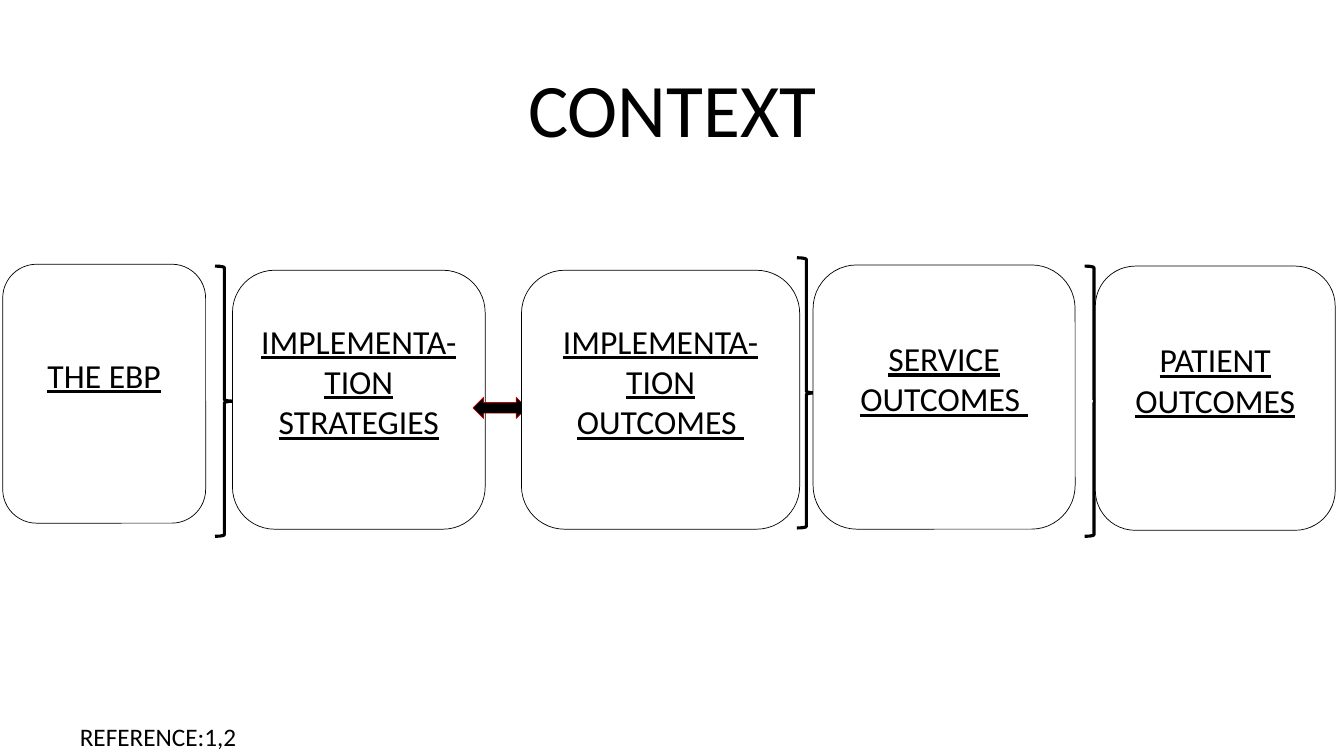
from pptx import Presentation
from pptx.dml.color import RGBColor
from pptx.enum.shapes import MSO_SHAPE
from pptx.enum.text import MSO_ANCHOR, MSO_AUTO_SIZE, PP_ALIGN
from pptx.util import Inches, Pt

ROUNDED = MSO_SHAPE.ROUNDED_RECTANGLE
BRACE = MSO_SHAPE.RIGHT_BRACE
DOUBLE_ARROW = MSO_SHAPE.LEFT_RIGHT_ARROW
MIDDLE, TOP = MSO_ANCHOR.MIDDLE, MSO_ANCHOR.TOP
CENTER, LEFT = PP_ALIGN.CENTER, PP_ALIGN.LEFT
FIT_SHAPE = MSO_AUTO_SIZE.SHAPE_TO_FIT_TEXT

COLORS = {"ink": "000000", "paper": "FFFFFF", "accent": "C00000"}
FONT = "Calibri"


class ContextPage:
    """Places elements by percent of the slide's width and height."""

    def __init__(self, deck):
        self.deck = deck
        self.page = deck.slides.add_slide(deck.slide_layouts[6])

    def area(self, left, top, width, height):
        across, down = self.deck.slide_width, self.deck.slide_height
        return [int(share * full / 100) for share, full in
                ((left, across), (top, down), (width, across), (height, down))]

    def color(self, name):
        return RGBColor.from_string(COLORS[name])

    def add_words(self, frame, text, size, align, anchor, underline=None):
        frame.vertical_anchor = anchor
        para = frame.paragraphs[0]
        para.alignment = align
        span = para.add_run()
        span.text = text
        span.font.name = FONT
        span.font.size = Pt(size)
        span.font.underline = underline
        span.font.color.rgb = self.color("ink")
        return para

    def label(self, area, text, size, align=LEFT, anchor=TOP, wrap=True):
        box = self.page.shapes.add_textbox(*self.area(*area))
        box.text_frame.word_wrap = wrap
        if not wrap:
            box.text_frame.auto_size = FIT_SHAPE
        return self.add_words(box.text_frame, text, size, align, anchor)

    def shape(self, kind, area, fill=None, line="ink", weight=0.5):
        shape = self.page.shapes.add_shape(kind, *self.area(*area))
        shape.shadow.inherit = False
        if fill:
            shape.fill.solid()
            shape.fill.fore_color.rgb = self.color(fill)
        else:
            shape.fill.background()
        shape.line.color.rgb = self.color(line)
        shape.line.width = Pt(weight)
        return shape

    def stage(self, area, text):
        frame = self.shape(ROUNDED, area, "paper").text_frame
        frame.word_wrap = True
        frame.margin_bottom = Inches(0.42)  # lifts the words above the middle
        self.add_words(frame, text, 24, CENTER, MIDDLE, underline=True)

    def brace(self, left, top):
        self.shape(BRACE, (left, top, 1.4, 35.75), weight=2.25)

    def double_arrow(self, area):
        self.shape(DOUBLE_ARROW, area, "ink", "accent")


def main():
    deck = Presentation()
    deck.slide_width, deck.slide_height = Inches(13.33), Inches(7.5)
    page = ContextPage(deck)

    # Title
    title = page.label((6.9, 5.33, 86.27, 19.33), "CONTEXT", 54, CENTER, MIDDLE)
    title.line_spacing = 0.9

    # Chain from the practice to the patient
    page.stage((0.2, 34.95, 15.1, 34.25), "THE EBP")
    page.brace(16, 35.2)
    page.stage((17.3, 35.75, 18.8, 34.25), "IMPLEMENTA-TION STRATEGIES")
    page.double_arrow((35.2, 52.55, 4, 2.8))
    page.stage((38.8, 35.75, 20.7, 34.25), "IMPLEMENTA-TION OUTCOMES ")
    page.brace(59.3, 34.1)
    page.stage((60.5, 35.05, 19.5, 34.95), "SERVICE OUTCOMES ")
    page.brace(80.7, 35.2)
    page.stage((81.5, 35.2, 17.85, 34.95), "PATIENT OUTCOMES")

    # Reference
    page.label((5.2, 94.8, 13.3, 5.33), "REFERENCE:1,2", 18, wrap=False)

    deck.save("out.pptx")


if __name__ == "__main__":
    main()
